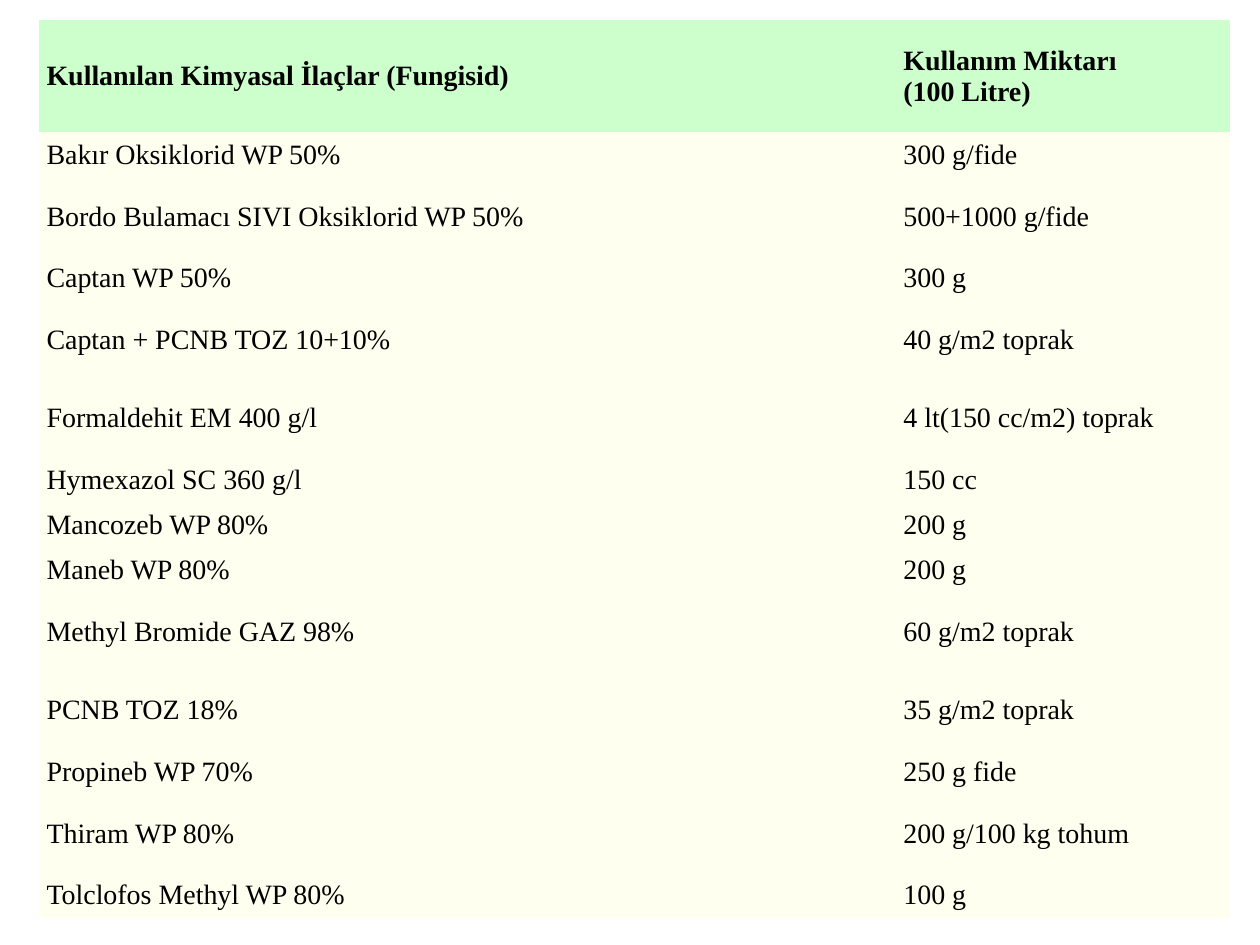
from dataclasses import dataclass

from pptx import Presentation
from pptx import util as u
from pptx.dml.color import RGBColor
from pptx.enum import text


@dataclass(frozen=True)
class Theme:
    font: str = "Times New Roman"
    size: int = 16
    ink: str = "000000"
    head: str = "CCFFCC"
    body: str = "FFFFEF"
    plain: str = "{2D5ABB26-0587-4C30-8999-92F81FD0307C}"


THEME = Theme()
COLS = (6.8, 2.65)
HEAD, LOW, TALL = 0.89, 0.36, 0.62
ROWS = (
    (HEAD, "Kullanılan Kimyasal İlaçlar (Fungisid)", "Kullanım Miktarı\v(100 Litre)"),
    (LOW, "Bakır Oksiklorid WP 50%", "300 g/fide"),
    (TALL, "Bordo Bulamacı SIVI Oksiklorid WP 50%", "500+1000 g/fide"),
    (LOW, "Captan WP 50%", "300 g"),
    (TALL, "Captan + PCNB TOZ 10+10%", "40 g/m2 toprak"),
    (TALL, "Formaldehit EM 400 g/l", "4 lt(150 cc/m2) toprak"),
    (LOW, "Hymexazol SC 360 g/l", "150 cc"),
    (LOW, "Mancozeb WP 80%", "200 g"),
    (LOW, "Maneb WP 80%", "200 g"),
    (TALL, "Methyl Bromide GAZ 98%", "60 g/m2 toprak"),
    (TALL, "PCNB TOZ 18%", "35 g/m2 toprak"),
    (LOW, "Propineb WP 70%", "250 g fide"),
    (TALL, "Thiram WP 80%", "200 g/100 kg tohum"),
    (LOW, "Tolclofos Methyl WP 80%", "100 g"),
)


def fill_cell(cell, words, head):
    cell.text_frame.text = words
    cell.vertical_anchor = text.MSO_ANCHOR.MIDDLE
    cell.margin_left = cell.margin_right = u.Inches(0.06)
    cell.margin_top = cell.margin_bottom = u.Inches(0.03)
    cell.fill.solid()
    cell.fill.fore_color.rgb = RGBColor.from_string(THEME.head if head else THEME.body)
    for run in cell.text_frame.paragraphs[0].runs:
        run.font.name = THEME.font
        run.font.size = u.Pt(THEME.size)
        run.font.bold = head
        run.font.color.rgb = RGBColor.from_string(THEME.ink)


def add_grid(slide, left, top):
    high = sum(row[0] for row in ROWS)
    frame = slide.shapes.add_table(
        len(ROWS), len(COLS), u.Inches(left), u.Inches(top),
        u.Inches(sum(COLS)), u.Inches(high),
    )
    grid = frame.table
    grid.first_row = True
    grid.horz_banding = False
    grid._tbl.tblPr[0].text = THEME.plain
    for col, wide in zip(grid.columns, COLS):
        col.width = u.Inches(wide)
    for i, (tall, *words) in enumerate(ROWS):
        grid.rows[i].height = u.Inches(tall)
        for j, word in enumerate(words):
            fill_cell(grid.cell(i, j), word, i == 0)


def main():
    deck = Presentation()
    deck.slide_width = u.Inches(10)
    deck.slide_height = u.Inches(7.5)
    slide = deck.slides.add_slide(deck.slide_layouts[6])
    add_grid(slide, 0.31, 0.16)
    deck.save("out.pptx")


if __name__ == "__main__":
    main()
